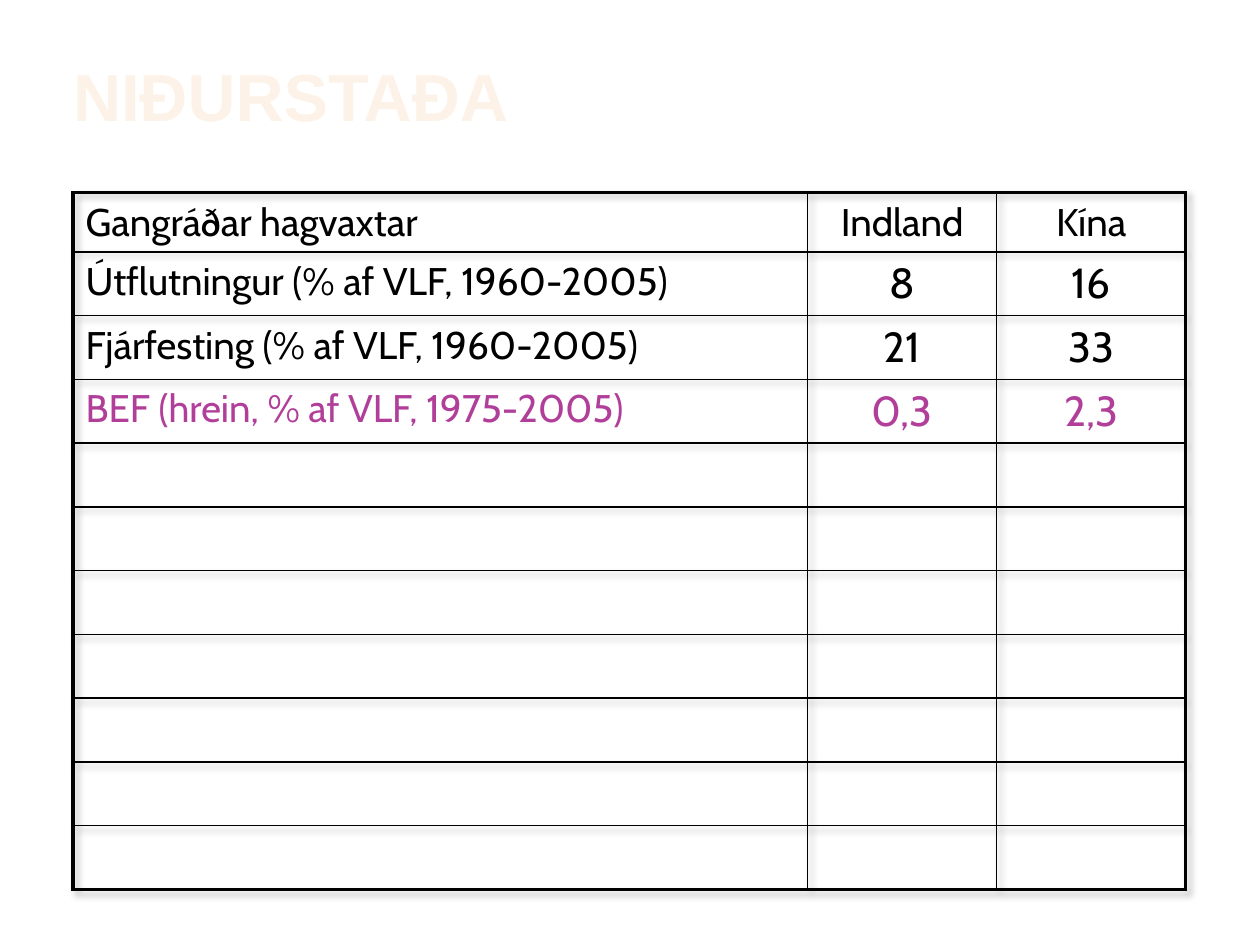
import pptx
import pptx.util
import pptx.dml.color
import pptx.enum.text
import pptx.oxml
import pptx.oxml.ns

Inches = pptx.util.Inches
Pt = pptx.util.Pt
COLORS = {"title": "FDF2E8", "ink": "000000", "accent": "B13F9A"}
NAMESPACE = pptx.oxml.ns.nsdecls("a")
ALIGN = pptx.enum.text.PP_ALIGN


def add_text(paragraph, text, size, font, color, bold=False):
    span = paragraph.add_run()
    span.text = text
    span.font.size = Pt(size)
    span.font.name = font
    span.font.bold = bold
    span.font.color.rgb = pptx.dml.color.RGBColor.from_string(COLORS[color])


def set_border(cell, side, width):
    """Draw one cell edge; side is L, R, T or B and width is in points."""
    cell._tc.get_or_add_tcPr().append(pptx.oxml.parse_xml(
        f'<a:ln{side} {NAMESPACE} w="{Pt(width)}"><a:solidFill>'
        f'<a:srgbClr val="{COLORS["ink"]}"/></a:solidFill></a:ln{side}>'))


deck = pptx.Presentation()
deck.slide_width = Inches(10)
deck.slide_height = Inches(7.5)
page = deck.slides.add_slide(deck.slide_layouts[6])

# Title
title = page.shapes.add_textbox(Inches(0.58), Inches(0.44), Inches(8.83), Inches(0.6))
frame = title.text_frame
frame.word_wrap = True
frame.margin_left = frame.margin_right = frame.margin_top = frame.margin_bottom = 0
add_text(frame.paragraphs[0], "NIÐURSTAÐA", 38, "Arial", "title", bold=True)

# Growth drivers table; the lower rows are left open
rows = [
    ("Gangráðar hagvaxtar", "Indland", "Kína"),
    ("Útflutningur (% af VLF, 1960-2005)", "8", "16"),
    ("Fjárfesting (% af VLF, 1960-2005)", "21", "33"),
    ("BEF (hrein, % af VLF, 1975-2005)", "0,3", "2,3"),
]
rows += [("", "", "")] * 7
accent_row = 3
last_row = len(rows) - 1
column_widths = [5.83, 1.5, 1.5]
header_height = 0.47
body_height = 5.06 / last_row

table_frame = page.shapes.add_table(
    len(rows), len(column_widths), Inches(0.58), Inches(1.53),
    Inches(sum(column_widths)), Inches(header_height + body_height * last_row))
table = table_frame.table
table.first_row = False
table.horz_banding = False
table._tbl.tblPr.insert(0, pptx.oxml.parse_xml(
    f'<a:effectLst {NAMESPACE}><a:outerShdw blurRad="{Pt(3)}" dist="{Pt(3)}" '
    'dir="2700000"><a:srgbClr val="000000"><a:alpha val="25000"/></a:srgbClr>'
    '</a:outerShdw></a:effectLst>'))
for column, width in zip(table.columns, column_widths):
    column.width = Inches(width)

for row_index, texts in enumerate(rows):
    table.rows[row_index].height = Inches(body_height if row_index else header_height)
    for column_index, text in enumerate(texts):
        cell = table.cell(row_index, column_index)
        outer_edges = {"L": column_index == 0, "R": column_index == 2,
                       "T": row_index == 0, "B": row_index == last_row}
        for side, is_outer in outer_edges.items():
            set_border(cell, side, 2.25 if is_outer else 1)
        cell.fill.background()
        paragraph = cell.text_frame.paragraphs[0]
        paragraph.alignment = ALIGN.CENTER if column_index else ALIGN.LEFT
        if text:
            size = 24 if row_index and column_index else 22
            color = "accent" if row_index == accent_row else "ink"
            add_text(paragraph, text, size, "Cabin", color)

deck.save("out.pptx")
